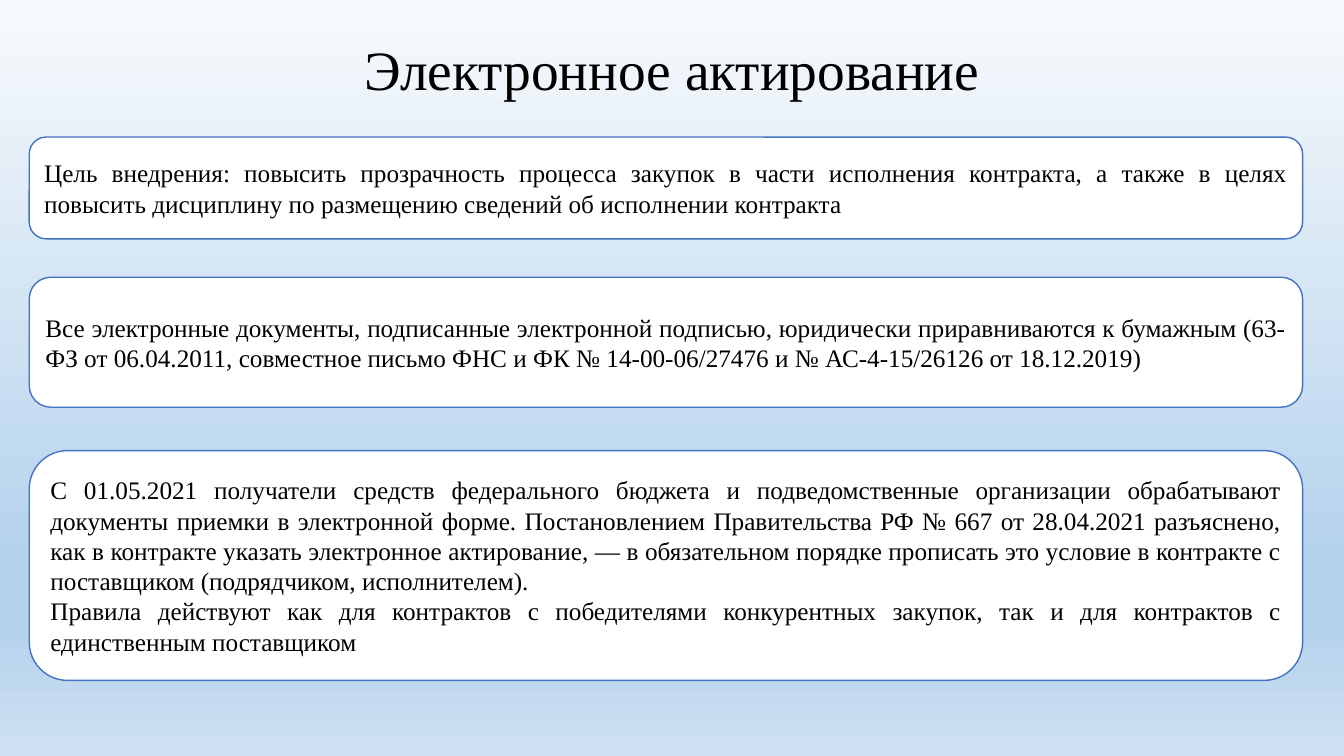
from copy import deepcopy
from pptx import Presentation
from pptx.dml.color import RGBColor
from pptx.enum.shapes import MSO_SHAPE
from pptx.enum.text import MSO_ANCHOR, MSO_AUTO_SIZE, PP_ALIGN
from pptx.oxml.ns import qn
from pptx.util import Inches, Pt

TITLE = "Электронное актирование"
# top, height, paragraphs
CARDS = [
    (1.36, 1.01, [
        "Цель внедрения: повысить прозрачность процесса закупок в части исполнения контракта, "
        "а также в целях повысить дисциплину по размещению сведений об исполнении контракта"]),
    (2.75, 1.29, [
        "Все электронные документы, подписанные электронной подписью, юридически приравниваются "
        "к бумажным (63-ФЗ от 06.04.2011, совместное письмо ФНС и ФК № 14-00-06/27476 "
        "и № АС-4-15/26126 от 18.12.2019)"]),
    (4.47, 2.28, [
        "С 01.05.2021 получатели средств федерального бюджета и подведомственные организации "
        "обрабатывают документы приемки в электронной форме. Постановлением Правительства РФ "
        "№ 667 от 28.04.2021 разъяснено, как в контракте указать электронное актирование, — "
        "в обязательном порядке прописать это условие в контракте с поставщиком "
        "(подрядчиком, исполнителем).",
        "Правила действуют как для контрактов с победителями конкурентных закупок, "
        "так и для контрактов с единственным поставщиком"]),
]
LEFT, WIDTH = 0.29, 12.63
BLACK = RGBColor(0, 0, 0)
WHITE = RGBColor(255, 255, 255)
BLUE = RGBColor(0x44, 0x72, 0xC4)
SKY = RGBColor(0xB5, 0xD2, 0xEC)
STOPS = [(0, RGBColor(0xF7, 0xFA, 0xFD)), (0.74, SKY), (0.83, SKY),
         (1, RGBColor(0xCE, 0xE1, 0xF2))]
FONT = {"name": "Times New Roman", "bold": False}


def paint(slide):
    """Fill the background with the gradient, top to bottom."""
    fill = slide.background.fill
    fill.gradient()
    fill.gradient_angle = 270
    stops = slide._element.find(".//" + qn("a:gsLst"))
    while len(stops) < len(STOPS):
        stops.append(deepcopy(stops[0]))
    for stop, (place, color) in zip(fill.gradient_stops, STOPS):
        stop.position = place
        stop.color.rgb = color


def write(frame, lines, size, align, **form):
    frame.text = "\n".join(lines)
    frame.word_wrap = True
    frame.vertical_anchor = MSO_ANCHOR.MIDDLE
    for para in frame.paragraphs:
        para.alignment = align
        for key, value in form.items():
            setattr(para, key, value)
        for run in para.runs:
            for key, value in {**FONT, "size": Pt(size)}.items():
                setattr(run.font, key, value)
            run.font.color.rgb = BLACK


def add_card(slide, top, height, lines):
    card = slide.shapes.add_shape(MSO_SHAPE.ROUNDED_RECTANGLE, *map(
        Inches, (LEFT, top, WIDTH, height)))
    card.shadow.inherit = False
    card.fill.solid()
    card.fill.fore_color.rgb = WHITE
    card.line.color.rgb = BLUE
    card.line.width = Pt(1)
    write(card.text_frame, lines, 18, PP_ALIGN.JUSTIFY)


def main():
    deck = Presentation()
    deck.slide_width, deck.slide_height = Inches(13.33), Inches(7.5)
    slide = deck.slides.add_slide(deck.slide_layouts[5])
    paint(slide)
    title = slide.shapes.title
    place = {"left": 3.48, "top": 0.45, "width": 6.37, "height": 0.53}
    for key, value in place.items():
        setattr(title, key, Inches(value))
    write(title.text_frame, [TITLE], 39.6, PP_ALIGN.CENTER, line_spacing=0.9)
    title.text_frame.auto_size = MSO_AUTO_SIZE.NONE
    for card in CARDS:
        add_card(slide, *card)
    deck.save("out.pptx")


if __name__ == "__main__":
    main()
